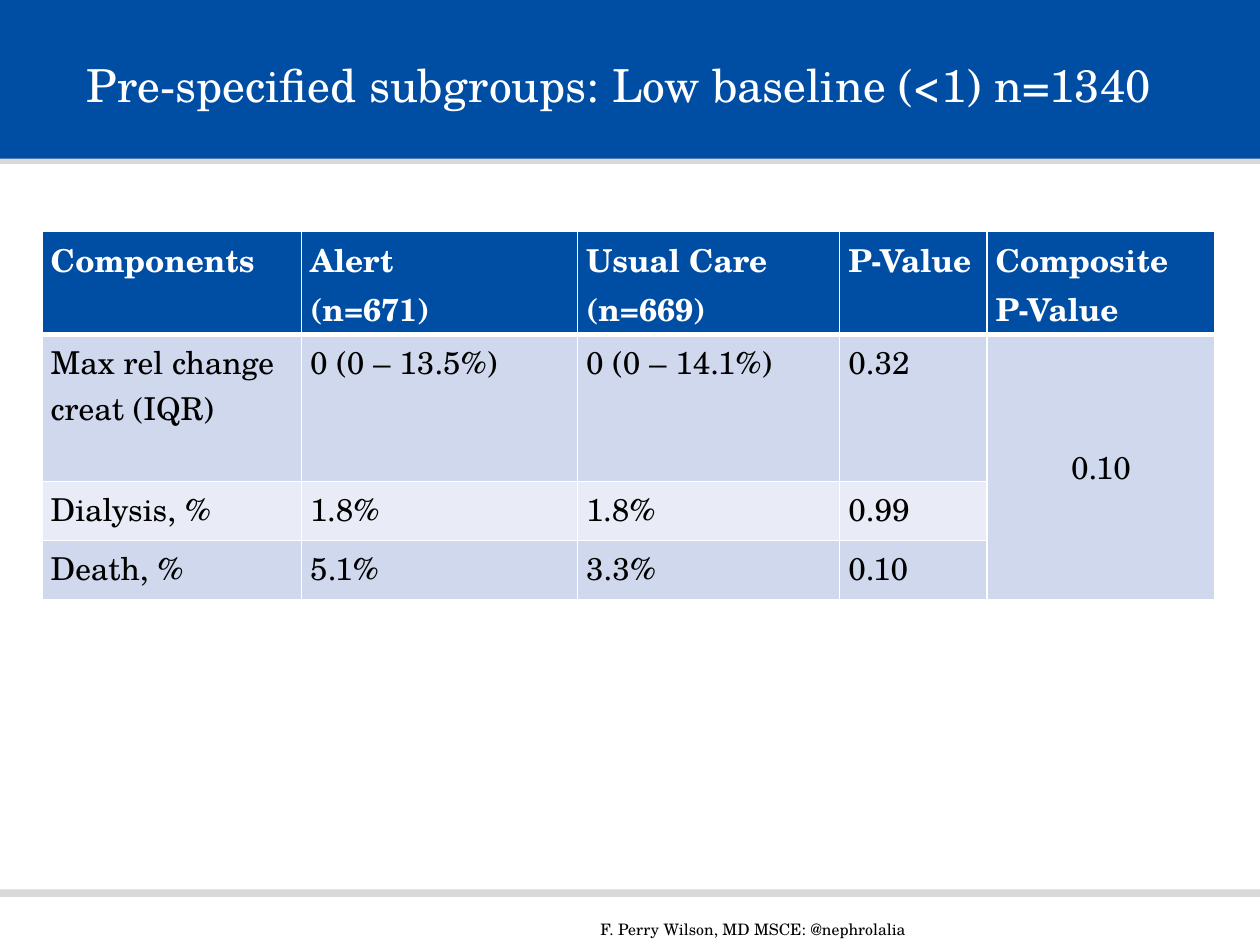
from lxml.etree import SubElement
from pptx import Presentation
from pptx.dml.color import RGBColor
from pptx.enum.shapes import MSO_SHAPE
from pptx.enum.text import MSO_ANCHOR, PP_ALIGN
from pptx.oxml.ns import qn
from pptx.util import Pt

BLUE, GRAY, WHITE, BLACK = "004DA4", "DAD9D9", "FFFFFF", "000000"
BANDS = ("CFD8EC", "E9ECF6")
COLUMNS = (148.3, 157.7, 149.8, 84.2, 130.3)
ROWS = (59, 84.2, 33.8, 33.8)
RESULTS = (
    ("Components", "Alert\n(n=671)", "Usual Care\n(n=669)", "P-Value", "Composite P-Value"),
    ("Max rel change creat (IQR)", "0 (0 – 13.5%)", "0 (0 – 14.1%)", "0.32", "0.10"),
    ("Dialysis, %", "1.8%", "1.8%", "0.99", ""),
    ("Death, %", "5.1%", "3.3%", "0.10", ""),
)


def color(value):
    """Turn a hex string into a colour."""
    return RGBColor.from_string(value)


def write(frame, text, size=18, ink=BLACK, bold=False, align=PP_ALIGN.LEFT):
    """Fill a text frame with formatted paragraphs."""
    frame.word_wrap = True
    frame.text = text
    for paragraph in frame.paragraphs:
        paragraph.alignment = align
        font = paragraph.font
        font.name, font.size, font.bold = "TeX Gyre Schola", Pt(size), bold
        font.color.rgb = color(ink)


def outline(cell, **widths):
    """Draw white borders of the given widths around a cell."""
    properties = cell._tc.get_or_add_tcPr()
    for position, side in enumerate("LRTB"):
        border = SubElement(properties, qn(f"a:ln{side}"), w=str(Pt(widths.get(side, 1))))
        ink = SubElement(border, qn("a:solidFill"))
        SubElement(ink, qn("a:srgbClr"), val=WHITE)
        properties.insert(position, border)


class Deck:
    """Hold the presentation style and the current slide."""

    def __init__(self, width, height):
        """Start a deck with one title-only slide."""
        self.presentation = Presentation()
        self.presentation.slide_width = Pt(width)
        self.presentation.slide_height = Pt(height)
        self.width = width
        self.slide = self.presentation.slides.add_slide(self.presentation.slide_layouts[5])

    def band(self, top, height, fill):
        """Add a full-width bar behind the title."""
        bar = self.slide.shapes.add_shape(
            MSO_SHAPE.RECTANGLE, 0, Pt(top), Pt(self.width), Pt(height))
        bar.shadow.inherit = False
        bar.fill.solid()
        bar.fill.fore_color.rgb = color(fill)
        bar.line.fill.background()
        tree = self.slide.shapes._spTree
        tree.remove(bar._element)
        tree.insert(tree.index(self.slide.shapes.title._element), bar._element)

    def title(self, text, left, top, width, height):
        """Place and format the title."""
        heading = self.slide.shapes.title
        heading.left, heading.top = Pt(left), Pt(top)
        heading.width, heading.height = Pt(width), Pt(height)
        heading.text_frame.vertical_anchor = MSO_ANCHOR.MIDDLE
        write(heading.text_frame, text, size=26, ink=WHITE)

    def credit(self, text, left, top, width, height):
        """Add the author line."""
        author = self.slide.shapes.add_textbox(Pt(left), Pt(top), Pt(width), Pt(height))
        write(author.text_frame, text, size=9)

    def table(self, rows, left, top, widths, heights):
        """Add a table with a header, banded rows and a merged last column."""
        grid = self.slide.shapes.add_table(
            len(rows), len(widths), Pt(left), Pt(top), Pt(sum(widths)), Pt(sum(heights))).table
        for column, width in zip(grid.columns, widths):
            column.width = Pt(width)
        for row, height in zip(grid.rows, heights):
            row.height = Pt(height)
        last = len(widths) - 1
        for r, texts in enumerate(rows):
            header = r == 0
            for c, text in enumerate(texts):
                cell = grid.cell(r, c)
                composite = c == last and not header
                cell.margin_left = cell.margin_right = Pt(5)
                cell.margin_top = cell.margin_bottom = Pt(2.5)
                cell.fill.solid()
                fill = BLUE if header else BANDS[0 if composite else (r - 1) % 2]
                cell.fill.fore_color.rgb = color(fill)
                cell.vertical_anchor = MSO_ANCHOR.MIDDLE if composite else MSO_ANCHOR.TOP
                write(cell.text_frame, text, ink=WHITE if header else BLACK, bold=header,
                      align=PP_ALIGN.CENTER if composite else PP_ALIGN.LEFT)
                outline(cell, T=3 if r == 1 else 1, B=3 if header else 1)
        grid.cell(1, last).merge(grid.cell(len(rows) - 1, last))


def main():
    """Build and save the slide."""
    deck = Deck(720, 540)
    deck.band(75.6, 18, GRAY)
    deck.band(-0.7, 91.4, BLUE)
    deck.band(508.3, 4.3, GRAY)
    deck.title("Pre-specified subgroups: Low baseline (<1) n=1340", 42.5, 12.2, 641, 72)
    deck.credit("F. Perry Wilson, MD MSCE: @nephrolalia", 336, 522, 210, 18)
    deck.table(RESULTS, 24, 132, COLUMNS, ROWS)
    deck.presentation.save("out.pptx")


if __name__ == "__main__":
    main()
